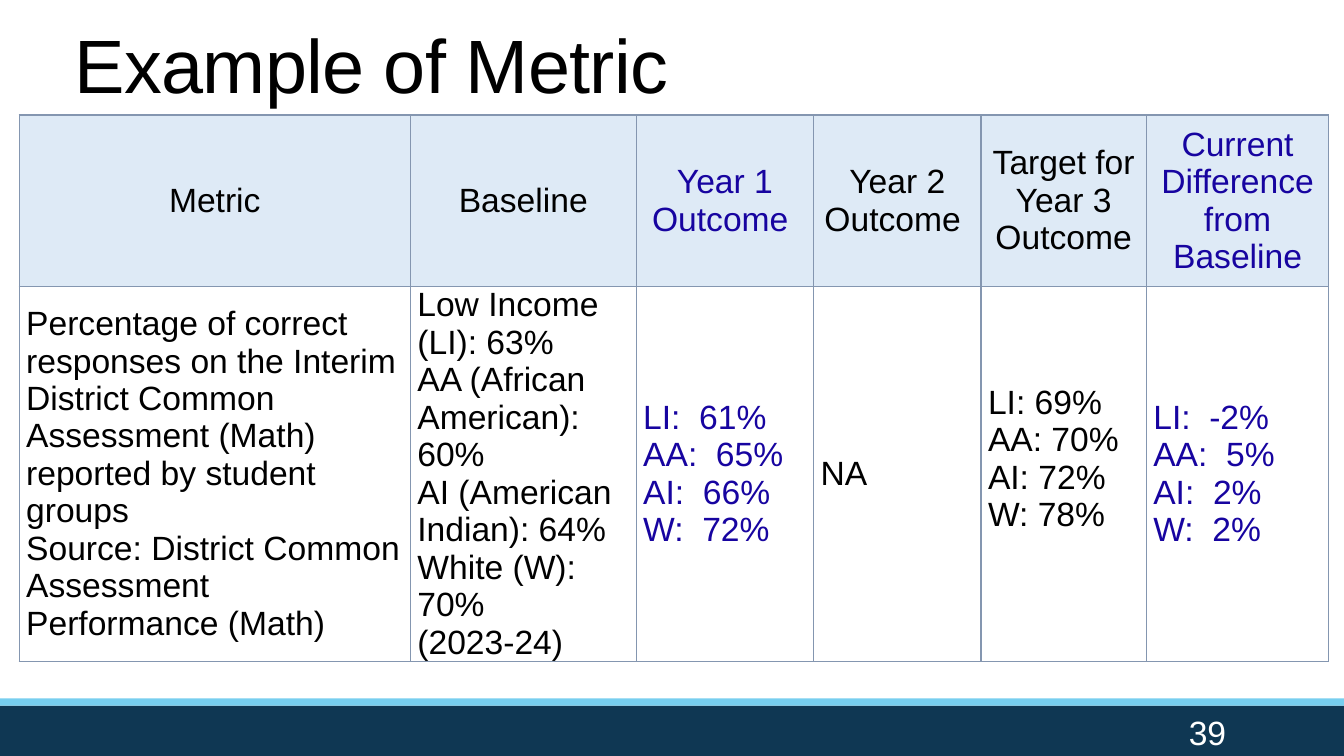
import pptx
import pptx.dml.color
import pptx.enum.shapes
import pptx.enum.text
import pptx.oxml
import pptx.util
from lxml import etree

Inches = pptx.util.Inches
Pt = pptx.util.Pt
RGBColor = pptx.dml.color.RGBColor
ALIGN = pptx.enum.text.PP_ALIGN
ANCHOR = pptx.enum.text.MSO_ANCHOR

BLACK = RGBColor(0x00, 0x00, 0x00)
WHITE = RGBColor(0xFF, 0xFF, 0xFF)
INDIGO = RGBColor(0x17, 0x04, 0xA0)
HEADER_BLUE = RGBColor(0xDE, 0xEA, 0xF6)
BORDER_BLUE = RGBColor(0x84, 0x96, 0xB0)
NAVY = RGBColor(0x0F, 0x37, 0x53)
SKY = RGBColor(0x77, 0xCE, 0xEF)

TITLE = "Example of Metric"
PAGE_NUMBER = "39"
COLUMNS = [
    ("Metric", 3.88, BLACK, [
        "Percentage of correct responses on the Interim District Common "
        "Assessment (Math) reported by student groups",
        "Source: District Common Assessment Performance (Math)"]),
    ("Baseline", 2.24, BLACK, [
        "Low Income (LI): 63%", "AA (African American): 60%",
        "AI (American Indian): 64%", "White (W): 70%", "(2023-24)"]),
    ("Year 1 Outcome ", 1.76, INDIGO, ["LI:  61%", "AA:  65%", "AI:  66%", "W:  72%"]),
    ("Year 2 Outcome ", 1.66, BLACK, ["NA"]),
    ("Target for Year 3 Outcome", 1.64, BLACK, ["LI: 69%", "AA: 70%", "AI: 72%", "W: 78%"]),
    ("Current Difference from Baseline", 1.81, INDIGO, ["LI:  -2%", "AA:  5%", "AI:  2%", "W:  2%"]),
]
ROW_HEIGHTS = [1.7, 3.72]
BANDS = [(7, 0.5, NAVY), (6.93, 0.07, SKY)]
RAISED_COLUMN = 4
RAISED_MARGIN = 0.3
CELL_FORMAT = {
    "margin_left": Inches(0.07), "margin_right": Inches(0.07),
    "margin_top": 0, "margin_bottom": 0, "vertical_anchor": ANCHOR.MIDDLE,
}


def apply_format(target, values):
    for name, value in values.items():
        setattr(target, name, value)


def write_lines(frame, lines, size, color, alignment, spacing=1.0):
    frame.word_wrap = True
    for index, line in enumerate(lines):
        para = frame.paragraphs[0] if index == 0 else frame.add_paragraph()
        apply_format(para, {"alignment": alignment, "line_spacing": spacing,
                            "space_before": Pt(0), "space_after": Pt(0)})
        span = para.add_run()
        span.text = line
        apply_format(span.font, {"name": "Arial", "size": Pt(size), "bold": False})
        span.font.color.rgb = color


def add_borders(cell):
    properties = cell._tc.get_or_add_tcPr()
    for side in ("lnL", "lnR", "lnT", "lnB"):
        border = etree.SubElement(properties, pptx.oxml.ns.qn("a:" + side), w=str(Pt(1)))
        fill = etree.SubElement(border, pptx.oxml.ns.qn("a:solidFill"))
        etree.SubElement(fill, pptx.oxml.ns.qn("a:srgbClr"), val=str(BORDER_BLUE))


def add_bands(page):
    for top, height, color in BANDS:
        band = page.shapes.add_shape(
            pptx.enum.shapes.MSO_SHAPE.RECTANGLE,
            0, Inches(top), Inches(13.33), Inches(height))
        band.shadow.inherit = False
        band.fill.solid()
        band.fill.fore_color.rgb = color
        band.line.fill.background()


def add_title(page):
    title = page.shapes.title
    apply_format(title, {"left": Inches(0.64), "top": Inches(0.22),
                         "width": Inches(12.06), "height": Inches(0.91)})
    frame = title.text_frame
    apply_format(frame, {"vertical_anchor": ANCHOR.BOTTOM,
                         "auto_size": pptx.enum.text.MSO_AUTO_SIZE.NONE})
    write_lines(frame, [TITLE], 54, BLACK, ALIGN.LEFT, 0.85)
    frame.paragraphs[0].runs[0].font._element.set("spc", "-50")


def add_metric_table(page):
    width = sum(column[1] for column in COLUMNS)
    table = page.shapes.add_table(
        len(ROW_HEIGHTS), len(COLUMNS), Inches(0.19), Inches(1.14),
        Inches(width), Inches(sum(ROW_HEIGHTS))).table
    apply_format(table, {"first_row": False, "horz_banding": False})
    for row, height in zip(table.rows, ROW_HEIGHTS):
        row.height = Inches(height)
    for index, (heading, width, color, lines) in enumerate(COLUMNS):
        table.columns[index].width = Inches(width)
        head, body = table.cell(0, index), table.cell(1, index)
        for cell in (head, body):
            apply_format(cell, CELL_FORMAT)
            add_borders(cell)
        head.fill.solid()
        head.fill.fore_color.rgb = HEADER_BLUE
        body.fill.background()
        write_lines(head.text_frame, [heading], 24, color, ALIGN.CENTER)
        write_lines(body.text_frame, lines, 24, color, ALIGN.LEFT)
    table.cell(1, RAISED_COLUMN).margin_bottom = Inches(RAISED_MARGIN)


def add_page_number(page):
    box = page.shapes.add_textbox(Inches(10.83), Inches(7.06), Inches(1.43), Inches(0.4))
    box.text_frame.vertical_anchor = ANCHOR.MIDDLE
    write_lines(box.text_frame, [PAGE_NUMBER], 24, WHITE, ALIGN.RIGHT)


def main():
    deck = pptx.Presentation()
    apply_format(deck, {"slide_width": Inches(13.33), "slide_height": Inches(7.5)})
    page = deck.slides.add_slide(deck.slide_layouts[5])
    add_bands(page)
    add_title(page)
    add_metric_table(page)
    add_page_number(page)
    deck.save("out.pptx")


if __name__ == "__main__":
    main()
